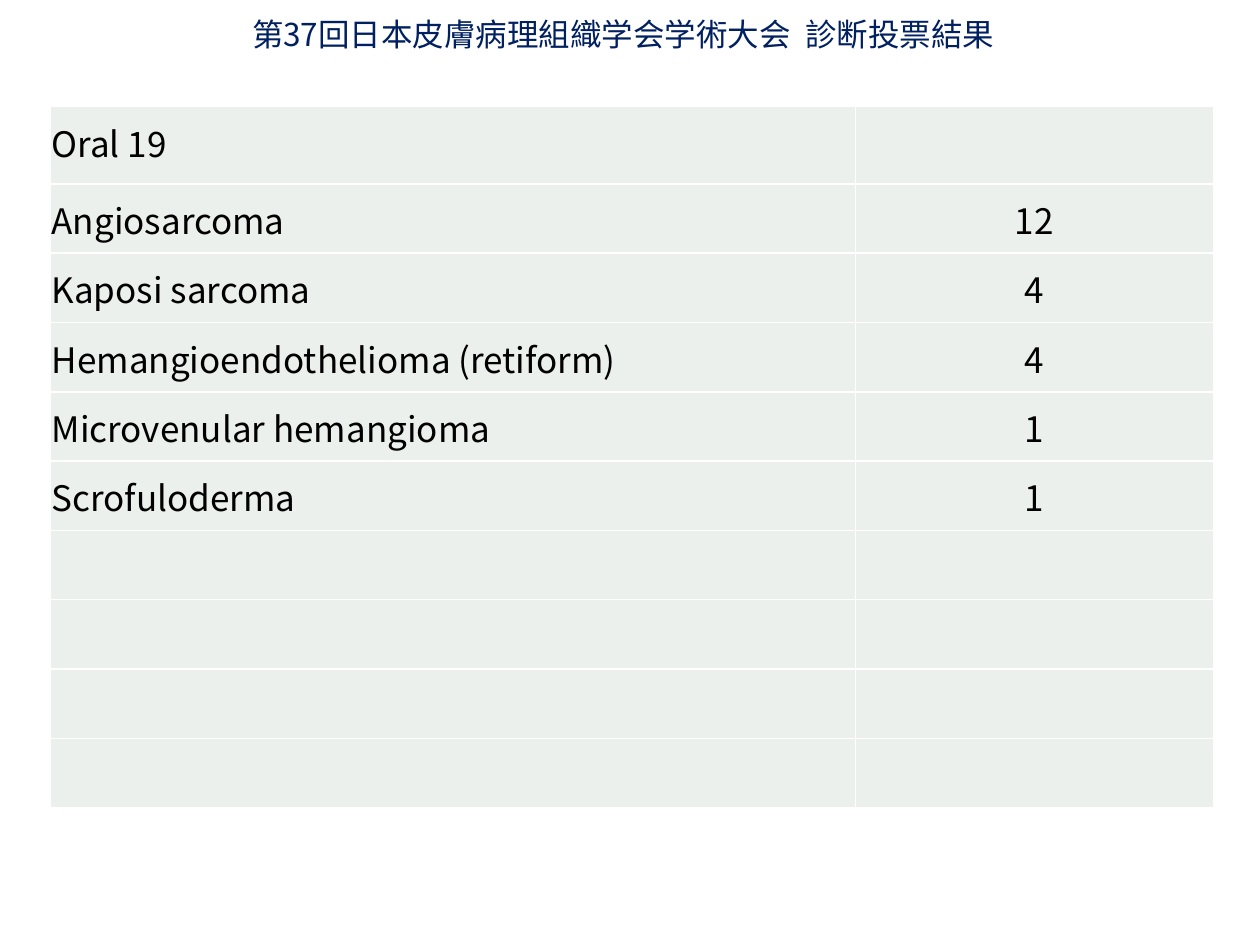
from lxml import etree
from pptx import Presentation
from pptx import util as u
from pptx.dml.color import RGBColor
from pptx.enum import text
from pptx.oxml import ns

TITLE = "第37回日本皮膚病理組織学会学術大会  診断投票結果"
SESSION = "Oral 19"
VOTES = [
    ("Angiosarcoma", "12"),
    ("Kaposi sarcoma", "4"),
    ("Hemangioendothelioma (retiform)", "4"),
    ("Microvenular hemangioma", "1"),
    ("Scrofuloderma", "1"),
]
ROW_COUNT = 10
COLUMN_WIDTHS = (6.39, 2.84)
HEADER_HEIGHT, ROW_HEIGHT = 0.62, 0.55
FONT = "Noto Sans CJK JP"
COLORS = {"title": "002060", "text": "000000", "cell": "EBF0EC", "border": "FFFFFF"}


def add_run(paragraph, words, size, color):
    run = paragraph.add_run()
    run.text = words
    run.font.size = u.Pt(size)
    run.font.name = FONT
    run.font.color.rgb = RGBColor.from_string(COLORS[color])
    east_asian = etree.SubElement(run.font._element, ns.qn("a:ea"))
    east_asian.set("typeface", FONT)


def add_borders(cell):
    properties = cell._tc.get_or_add_tcPr()
    for index, side in enumerate(("lnL", "lnR", "lnT", "lnB")):
        line = etree.Element(ns.qn(f"a:{side}"), w=str(u.Pt(1)))
        fill = etree.SubElement(line, ns.qn("a:solidFill"))
        etree.SubElement(fill, ns.qn("a:srgbClr"), val=COLORS["border"])
        properties.insert(index, line)


def add_title(slide):
    title = slide.shapes.title
    title.left, title.top = u.Inches(1.9), u.Inches(0.12)
    title.width, title.height = u.Inches(6.2), u.Inches(0.4)
    frame = title.text_frame
    frame.word_wrap = True
    frame.auto_size = text.MSO_AUTO_SIZE.SHAPE_TO_FIT_TEXT
    frame.vertical_anchor = text.MSO_ANCHOR.TOP
    paragraph = frame.paragraphs[0]
    paragraph.alignment = text.PP_ALIGN.LEFT
    paragraph.line_spacing = 0.83
    add_run(paragraph, TITLE, 18, "title")


def add_votes(slide):
    heights = [HEADER_HEIGHT] + [ROW_HEIGHT] * (ROW_COUNT - 1)
    table = slide.shapes.add_table(
        ROW_COUNT, len(COLUMN_WIDTHS), u.Inches(0.4), u.Inches(0.84),
        u.Inches(sum(COLUMN_WIDTHS)), u.Inches(sum(heights)),
    ).table
    for column, width in zip(table.columns, COLUMN_WIDTHS):
        column.width = u.Inches(width)
    for row, height in zip(table.rows, heights):
        row.height = u.Inches(height)

    rows = [(SESSION, "")] + VOTES
    rows += [("", "")] * (ROW_COUNT - len(rows))
    for row_index, values in enumerate(rows):
        for column_index, value in enumerate(values):
            cell = table.cell(row_index, column_index)
            cell.fill.solid()
            cell.fill.fore_color.rgb = RGBColor.from_string(COLORS["cell"])
            add_borders(cell)
            if not value:
                continue
            cell.vertical_anchor = text.MSO_ANCHOR.MIDDLE
            cell.margin_left = cell.margin_top = cell.margin_right = u.Inches(0.01)
            cell.margin_bottom = u.Inches(0 if row_index else 0.05)
            paragraph = cell.text_frame.paragraphs[0]
            if column_index:
                paragraph.alignment = text.PP_ALIGN.CENTER
            add_run(paragraph, value, 20, "text")


def main():
    presentation = Presentation()
    presentation.slide_width, presentation.slide_height = u.Inches(10), u.Inches(7.5)
    slide = presentation.slides.add_slide(presentation.slide_layouts[5])
    add_title(slide)
    add_votes(slide)
    presentation.save("out.pptx")


if __name__ == "__main__":
    main()
